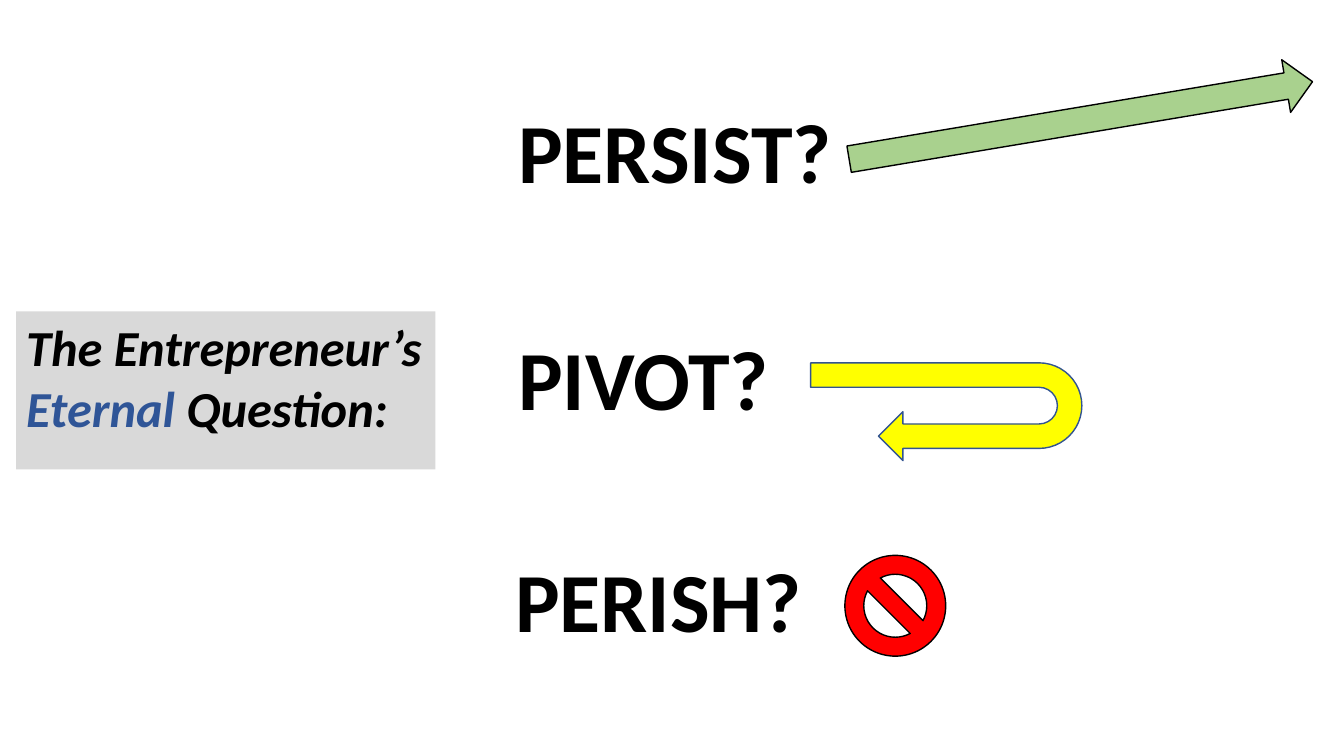
from pptx import Presentation
from pptx.dml.color import RGBColor
from pptx.enum import shapes, text
from pptx.util import Inches, Pt

BLACK = RGBColor(0x00, 0x00, 0x00)
GREY = RGBColor(0xD9, 0xD9, 0xD9)
BLUE = RGBColor(0x2F, 0x55, 0x97)
OUTLINE_BLUE = RGBColor(0x32, 0x54, 0x91)
GREEN = RGBColor(0xA9, 0xD1, 0x8E)
YELLOW = RGBColor(0xFF, 0xFF, 0x00)
RED = RGBColor(0xFF, 0x00, 0x00)
FONT = "Calibri"


def add_span(para, words, size, color=BLACK, italic=False):
    span = para.add_run()
    span.text = words
    font = span.font
    font.name, font.size = FONT, Pt(size)
    font.bold, font.italic = True, italic
    font.color.rgb = color


class QuestionSlide:
    title_size = 36
    option_size = 60

    def __init__(self, deck):
        self.page = deck.slides.add_slide(deck.slide_layouts[5])

    def prepare(self, box):
        frame = box.text_frame
        frame.word_wrap = False
        frame.auto_size = text.MSO_AUTO_SIZE.SHAPE_TO_FIT_TEXT
        frame.vertical_anchor = text.MSO_ANCHOR.TOP
        return frame

    def title(self, lines, left, top, width, height):
        box = self.page.shapes.title
        box.left, box.top = Inches(left), Inches(top)
        box.width, box.height = Inches(width), Inches(height)
        box.fill.solid()
        box.fill.fore_color.rgb = GREY
        frame = self.prepare(box)
        for number, spans in enumerate(lines):
            para = frame.add_paragraph() if number else frame.paragraphs[0]
            para.alignment = text.PP_ALIGN.LEFT
            for words, color in spans:
                add_span(para, words, self.title_size, color, italic=True)

    def option(self, words, left, top, width, height=1.11):
        box = self.page.shapes.add_textbox(
            Inches(left), Inches(top), Inches(width), Inches(height))
        add_span(self.prepare(box).paragraphs[0], words, self.option_size)

    def symbol(self, kind, left, top, width, height, fill, line=BLACK, rotation=0):
        shape = self.page.shapes.add_shape(
            kind, Inches(left), Inches(top), Inches(width), Inches(height))
        shape.rotation = rotation
        shape.shadow.inherit = False
        shape.fill.solid()
        shape.fill.fore_color.rgb = fill
        shape.line.color.rgb = line
        shape.line.width = Pt(1)


def main():
    deck = Presentation()
    deck.slide_width, deck.slide_height = Inches(13.33), Inches(7.5)
    slide = QuestionSlide(deck)
    kinds = shapes.MSO_SHAPE

    # Question
    slide.title([[("The Entrepreneur’s", BLACK)],
                 [("Eternal", BLUE), (" Question:", BLACK)]],
                0.16, 3.09, 4.16, 1.31)

    # Three possible answers
    slide.option("PERSIST?", 5.04, 0.94, 3.34)
    slide.option("PIVOT?", 5.04, 3.19, 2.71)
    slide.option("PERISH?", 5.01, 5.39, 3.08)

    # A symbol for each answer
    slide.symbol(kinds.RIGHT_ARROW, 8.39, 0.93, 4.66, 0.53, GREEN, rotation=350.5)
    slide.symbol(kinds.U_TURN_ARROW, 8.9, 2.74, 0.97, 2.69, YELLOW,
                 line=OUTLINE_BLUE, rotation=90)
    slide.symbol(kinds.NO_SYMBOL, 8.38, 5.51, 1, 1, RED)

    deck.save("out.pptx")


if __name__ == "__main__":
    main()
